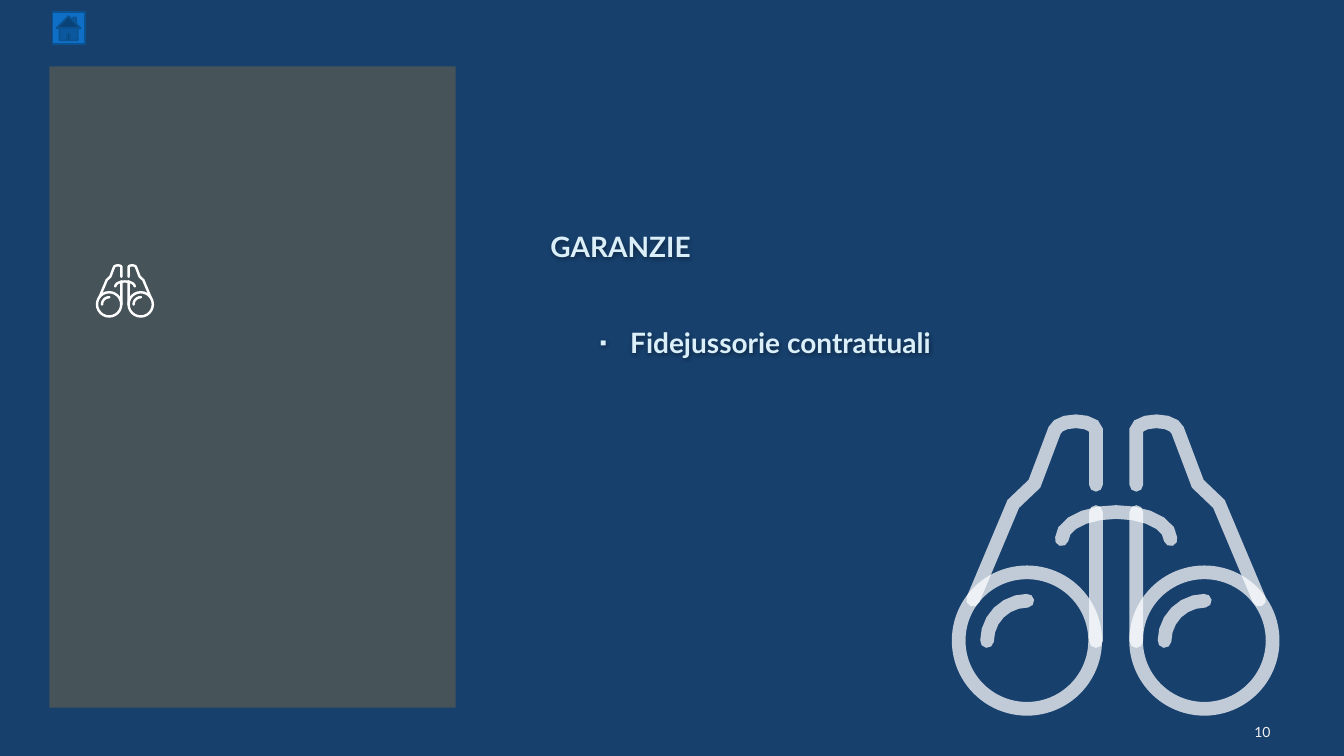
from math import atan2, cos, hypot, pi, sin

from lxml.etree import SubElement
from pptx import Presentation
from pptx.dml.color import RGBColor
from pptx.enum.shapes import MSO_SHAPE
from pptx.enum.text import MSO_ANCHOR, MSO_AUTO_SIZE, PP_ALIGN
from pptx.oxml.ns import qn
from pptx.util import Inches, Pt

FONT = "Lato"
NAVY, SLATE, PALE, WHITE, BLACK = "17406D", "465359", "DBEFF9", "FFFFFF", "000000"
BLUE, DARK_BLUE, NUMBER_GREY = "0F6FC6", "0B5292", "F2F2F2"
ICON_WIDTH, STROKE, LENS, LENS_STEP = 3.26, 0.136, 1.49, 1.76


def paint(fill, colour):
    """Fill with a solid hex colour."""
    fill.solid()
    fill.fore_color.rgb = RGBColor.from_string(colour)


def plain_shape(shapes, kind, box, colour):
    """Add a preset shape without line or shadow."""
    shape = shapes.add_shape(kind, *(Inches(v) for v in box))
    shape.shadow.inherit = False
    paint(shape.fill, colour)
    shape.line.fill.background()
    return shape


def write(paragraph, text, size, colour, bold=False):
    """Add one run of text."""
    run = paragraph.add_run()
    run.text = text
    run.font.size, run.font.bold, run.font.name = Pt(size), bold, FONT
    paint(run.font.fill, colour)


def frame_text(part, box, anchor):
    """Place a text part and give its frame fixed, wrapped text."""
    part.left, part.top, part.width, part.height = (Inches(v) for v in box)
    frame = part.text_frame
    frame.word_wrap, frame.auto_size, frame.vertical_anchor = True, MSO_AUTO_SIZE.NONE, anchor
    return frame


def cast_shadow(part):
    """Give the text of an unfilled part a soft shadow."""
    effects = SubElement(part._element.spPr, qn("a:effectLst"))
    outer = SubElement(effects, qn("a:outerShdw"), blurRad="38100", dist="19050", dir="2700000")
    tint = SubElement(outer, qn("a:srgbClr"), val=BLACK)
    SubElement(tint, qn("a:alpha"), val="40000")


def arc(cx, cy, rx, ry, start, end, steps=8):
    """Return points along an ellipse between two angles in degrees."""
    angles = [(start + (end - start) * i / steps) * pi / 180 for i in range(steps + 1)]
    return [(cx + rx * cos(a), cy + ry * sin(a)) for a in angles]


def side(points):
    """Return the left edge of a thick line, with a round cap at its end."""
    half = STROKE / 2
    headings = [atan2(y2 - y1, x2 - x1) for (x1, y1), (x2, y2) in zip(points, points[1:])]
    edge = []
    for (x, y), before, after in zip(points, headings[:1] + headings, headings):
        nx, ny = -sin(before) - sin(after), cos(before) + cos(after)
        reach = 2 * half / hypot(nx, ny) ** 2
        edge.append((x + nx * reach, y + ny * reach))
    turn = headings[-1] * 180 / pi
    return edge + arc(*points[-1], half, half, turn + 90, turn - 90, 4)


def mirror(points):
    """Reflect points about the middle of the icon."""
    return [(ICON_WIDTH - x, y) for x, y in points]


def binoculars(slide, left, top, width, opacity):
    """Draw the binoculars icon at the given width."""
    scale = width / ICON_WIDTH
    shapes = slide.shapes.add_group_shape().shapes
    barrel = [(0.21, 1.84), (0.61, 0.89), (0.82, 0.69), (1.02, 0.16),
              *arc(1.23, 0.16, 0.2, 0.09, 210, 330, 4), (1.43, 0.16), (1.43, 0.7)]
    tube = [(1.43, 0.97), (1.43, 2.25)]
    glint = arc(0.75, 2.25, 0.4, 0.4, 180, 270, 6)
    bridge = arc(1.63, 1.24, 0.54, 0.27, 180, 360, 10)
    parts = []
    for step in (0, LENS_STEP):
        box = (left + step * scale, top + 1.5 * scale, LENS * scale, LENS * scale)
        lens = plain_shape(shapes, MSO_SHAPE.DONUT, box, WHITE)
        lens.adjustments[0] = STROKE / LENS
        parts.append(lens)
    for line in (barrel, mirror(barrel), bridge, tube, mirror(tube),
                 glint, [(x + LENS_STEP, y) for x, y in glint]):
        outline = side(line) + side(line[::-1])
        points = [(Inches(left + x * scale), Inches(top + y * scale)) for x, y in outline]
        builder = shapes.build_freeform(*points[0])
        builder.add_line_segments(points[1:], close=True)
        stroke = builder.convert_to_shape()
        stroke.shadow.inherit = False
        paint(stroke.fill, WHITE)
        stroke.line.fill.background()
        parts.append(stroke)
    if opacity < 100:
        for part in parts:
            tint = part._element.spPr.find(qn("a:solidFill"))[0]
            SubElement(tint, qn("a:alpha"), val=str(opacity * 1000))


def side_panel(slide, left, top, width, height):
    """Build the panel with its small icon."""
    plain_shape(slide.shapes, MSO_SHAPE.RECTANGLE, (left, top, width, height), SLATE)
    binoculars(slide, left + 0.46, top + 1.96, 0.58, 100)


def guarantees(slide, left, top, width, height):
    """Build the heading and its bulleted list."""
    body = slide.placeholders[1]
    frame = frame_text(body, (left, top, width, height), MSO_ANCHOR.TOP)
    cast_shadow(body)
    frame.margin_top = Inches(0.99)
    group, product = frame.paragraphs[0], frame.add_paragraph()
    product.level = 1
    for paragraph, before, margin, indent in ((group, 0, 0, 0), (product, 44.5, 0.79, -0.3)):
        paragraph.space_before, paragraph.space_after = Pt(before), Pt(0)
        props = paragraph._p.get_or_add_pPr()
        props.set("marL", str(Inches(margin)))
        props.set("indent", str(Inches(indent)))
    SubElement(group._p.pPr, qn("a:buNone"))
    bullet_colour = SubElement(product._p.pPr, qn("a:buClr"))
    SubElement(bullet_colour, qn("a:srgbClr"), val=PALE)
    SubElement(product._p.pPr, qn("a:buSzPct"), val="70000")
    SubElement(product._p.pPr, qn("a:buChar"), char="▪")
    write(group, "GARANZIE", 20, PALE, True)
    write(product, "Fidejussorie contrattuali", 20, PALE, True)


def navigation(slide):
    """Add the home button and the slide number."""
    home = plain_shape(slide.shapes, MSO_SHAPE.ACTION_BUTTON_HOME, (0.52, 0.12, 0.32, 0.32), BLUE)
    paint(home.line.fill, DARK_BLUE)
    home.line.width = Pt(1.25)
    number_box = slide.shapes.add_textbox(0, 0, 0, 0)
    number = frame_text(number_box, (11.55, 7.06, 1.15, 0.4), MSO_ANCHOR.MIDDLE).paragraphs[0]
    number.alignment = PP_ALIGN.RIGHT
    write(number, "10", 10, NUMBER_GREY)


def main():
    """Build and save the slide."""
    deck = Presentation()
    deck.slide_width, deck.slide_height = Inches(13.33), Inches(7.5)
    slide = deck.slides.add_slide(deck.slide_layouts[1])
    unused_title = slide.shapes.title._element
    unused_title.getparent().remove(unused_title)
    paint(slide.background.fill, NAVY)
    side_panel(slide, 0.49, 0.66, 4.03, 6.36)
    guarantees(slide, 5.36, 1.29, 7.8, 5.09)
    binoculars(slide, 9.44, 4.11, ICON_WIDTH, 73)
    navigation(slide)
    deck.save("out.pptx")


if __name__ == "__main__":
    main()
